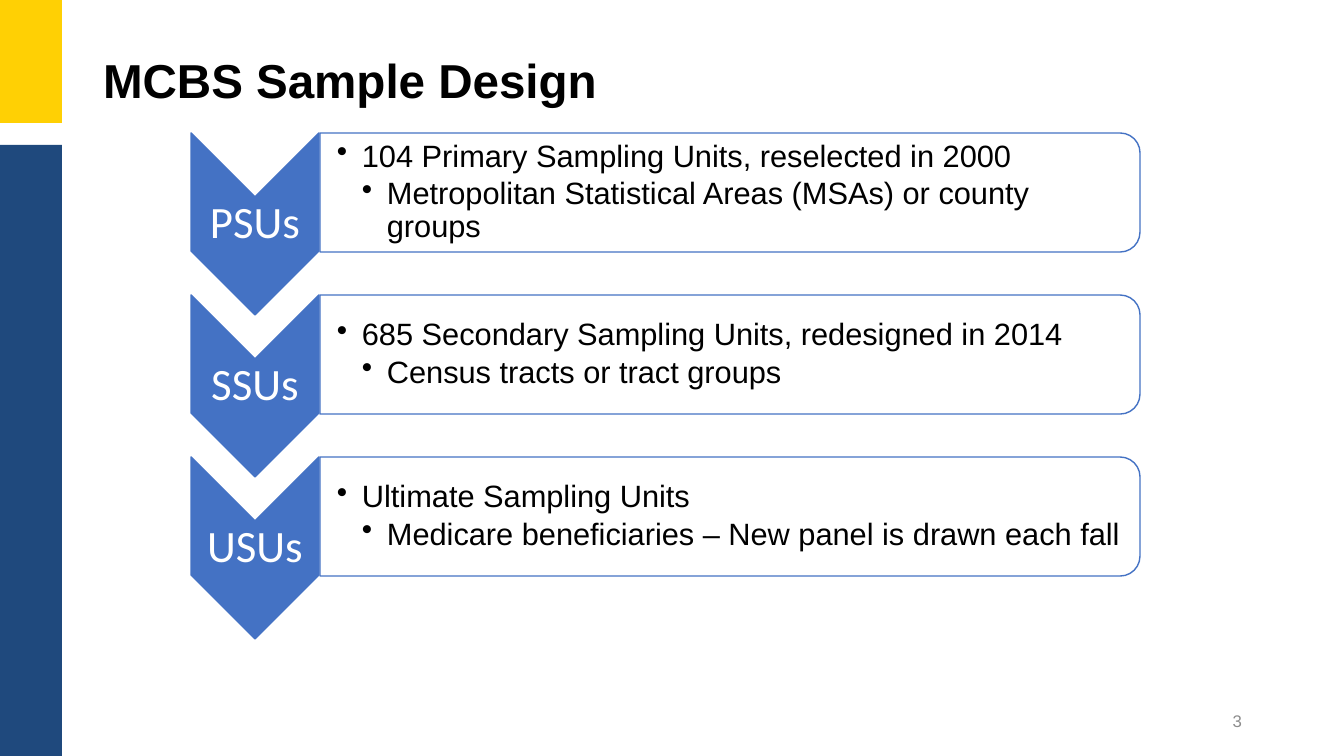
from lxml.etree import SubElement
from pptx import Presentation
from pptx.dml.color import RGBColor
from pptx.enum.shapes import MSO_SHAPE
from pptx.enum.text import MSO_ANCHOR, PP_ALIGN
from pptx.oxml.ns import qn
from pptx.util import Emu, Pt

TITLE = "MCBS Sample Design"
PAGE = "3"
STAGES = [
    ("PSUs", "104 Primary Sampling Units, reselected in 2000",
     "Metropolitan Statistical Areas (MSAs) or county groups"),
    ("SSUs", "685 Secondary Sampling Units, redesigned in 2014",
     "Census tracts or tract groups"),
    ("USUs", "Ultimate Sampling Units",
     "Medicare beneficiaries – New panel is drawn each fall"),
]

BLACK = RGBColor(0x00, 0x00, 0x00)
WHITE = RGBColor(0xFF, 0xFF, 0xFF)
GRAY = RGBColor(0x8C, 0x8C, 0x8C)
YELLOW = RGBColor(0xFF, 0xD0, 0x04)
NAVY = RGBColor(0x1F, 0x49, 0x7D)
BLUE = RGBColor(0x44, 0x72, 0xC4)

SLIDE_W, SLIDE_H = 1344, 756
BAND_W, YELLOW_H, NAVY_TOP = 62, 123, 145
STAGE_TOP, PITCH = 133, 162
CHEVRON_X, CHEVRON_W, CHEVRON_H = 191, 128, 182
CARD_X, CARD_W, CARD_H = 320, 820, 119
LABEL_DY, LABEL_H = 64, 54
LIST_DY, LIST_W, LIST_H = 6, 813, 107
INSET, LIST_INSET, INDENT = 2, 17, 25


def px(n):
    return Emu(round(n * 914400 / 100.8))


def add_shape(s, kind, x, y, w, h, fill, line=None, turned=False):
    if turned:
        x, y, w, h = x + (w - h) / 2, y + (h - w) / 2, h, w
    sp = s.shapes.add_shape(kind, px(x), px(y), px(w), px(h))
    sp.shadow.inherit = False
    sp.fill.solid()
    sp.fill.fore_color.rgb = fill
    if line is None:
        sp.line.fill.background()
    else:
        sp.line.color.rgb = line
        sp.line.width = Pt(1)
    if turned:
        sp.rotation = 90


def style(p, size, color, font="Arial", bold=False):
    for r in p.runs:
        r.font.name = font
        r.font.size = Pt(size)
        r.font.bold = bold
        r.font.color.rgb = color


def add_text(s, x, y, w, h, inset=None, left=None):
    tf = s.shapes.add_textbox(px(x), px(y), px(w), px(h)).text_frame
    tf.word_wrap = True
    tf.vertical_anchor = MSO_ANCHOR.MIDDLE
    if inset is not None:
        tf.margin_top = tf.margin_bottom = tf.margin_right = px(inset)
        tf.margin_left = px(inset if left is None else left)
    return tf


def add_bullet(p, level):
    p.level = level
    p.line_spacing = 0.9
    p.space_after = Pt(3)
    pPr = p._p.get_or_add_pPr()
    pPr.set("marL", str(px(INDENT * level)))
    pPr.set("indent", str(-px(INDENT)))
    SubElement(pPr, qn("a:buChar")).set("char", "•")


def add_stage(s, y, label, *items):
    add_shape(s, MSO_SHAPE.CHEVRON, CHEVRON_X, y, CHEVRON_W, CHEVRON_H,
              BLUE, BLUE, turned=True)
    p = add_text(s, CHEVRON_X, y + LABEL_DY, CHEVRON_W, LABEL_H, INSET).paragraphs[0]
    p.text = label
    p.alignment = PP_ALIGN.CENTER
    p.line_spacing = 0.9
    style(p, 32, WHITE, "Calibri")

    add_shape(s, MSO_SHAPE.ROUND_2_SAME_RECTANGLE, CARD_X, y, CARD_W, CARD_H,
              WHITE, BLUE, turned=True)
    tf = add_text(s, CARD_X, y + LIST_DY, LIST_W, LIST_H, INSET, LIST_INSET)
    tf.text = "\n".join(items)
    for level, p in enumerate(tf.paragraphs, 1):
        add_bullet(p, level)
        style(p, 22, BLACK)


def main():
    prs = Presentation()
    prs.slide_width, prs.slide_height = px(SLIDE_W), px(SLIDE_H)
    s = prs.slides.add_slide(prs.slide_layouts[5])

    add_shape(s, MSO_SHAPE.RECTANGLE, 0, 0, BAND_W, YELLOW_H, YELLOW)
    add_shape(s, MSO_SHAPE.RECTANGLE, 0, NAVY_TOP, BAND_W, SLIDE_H - NAVY_TOP, NAVY)

    title = s.shapes.title
    title.left, title.top, title.width, title.height = px(93), px(22), px(1159), px(122)
    tf = title.text_frame
    tf.text = TITLE
    tf.vertical_anchor = MSO_ANCHOR.MIDDLE
    p = tf.paragraphs[0]
    p.alignment = PP_ALIGN.LEFT
    p.line_spacing = 0.9
    style(p, 34, BLACK, bold=True)

    for i, stage in enumerate(STAGES):
        add_stage(s, STAGE_TOP + i * PITCH, *stage)

    p = add_text(s, 950, 701, 302, 40).paragraphs[0]
    p.text = PAGE
    p.alignment = PP_ALIGN.RIGHT
    style(p, 12, GRAY)

    prs.save("out.pptx")


if __name__ == "__main__":
    main()
